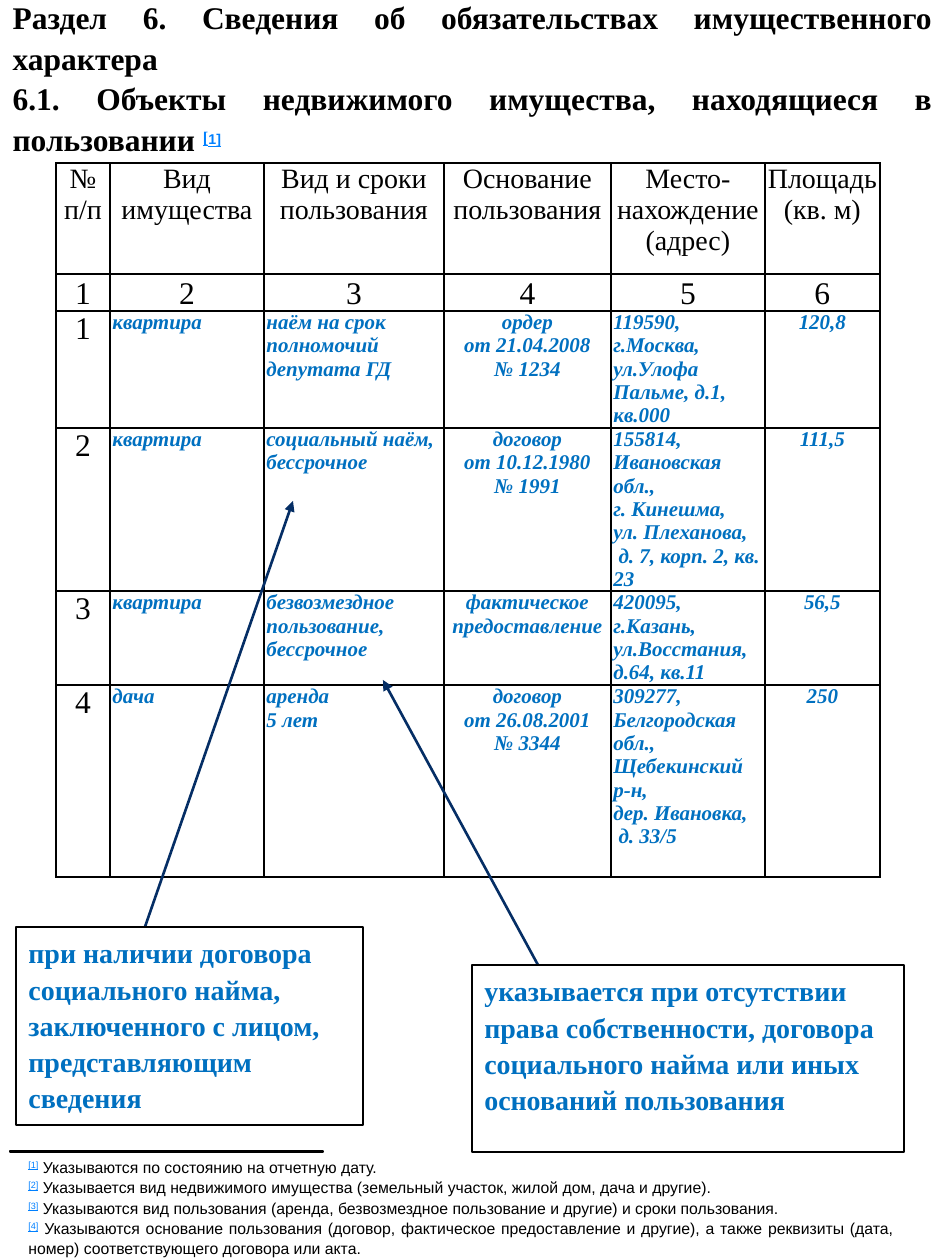
import pptx
import pptx.util
import pptx.dml.color
import pptx.enum.shapes
import pptx.enum.text
import pptx.oxml
import pptx.oxml.ns
from lxml import etree

PX = 914400 // 126
ALIGN = pptx.enum.text.PP_ALIGN
ANCHOR = pptx.enum.text.MSO_ANCHOR
SHAPES = pptx.enum.shapes

THEME = {
    "serif": "Times New Roman", "sans": "Arial",
    "black": "000000", "white": "FFFFFF", "blue": "0070C0",
    "link": "0080FF", "arrow": "052E65",
    "title": 18, "head": 16, "number": 18, "entry": 12, "callout": 16, "note": 9,
    "spacing": 1.08,
}

TITLE = [
    "Раздел 6. Сведения об обязательствах имущественного характера",
    "6.1. Объекты недвижимого имущества, находящиеся в пользовании ",
]
HEAD = ["№\vп/п", "Вид имущества", "Вид и сроки пользования", "Основание пользования",
        "Место-нахождение (адрес)", "Площадь\v(кв. м)"]
ENTRIES = [
    ["1", "квартира", "наём на срок полномочий депутата ГД",
     "ордер\nот 21.04.2008\n№ 1234",
     "119590, г.Москва, ул.Улофа Пальме, д.1, кв.000", "120,8"],
    ["2", "квартира", "социальный наём,\nбессрочное",
     "договор\nот 10.12.1980\n№ 1991",
     "155814, Ивановская обл.,\nг. Кинешма,\nул. Плеханова,\v д. 7, корп. 2, кв. 23", "111,5"],
    ["3", "квартира", "безвозмездное пользование,\nбессрочное",
     "фактическое предоставление",
     "420095, г.Казань, ул.Восстания, д.64, кв.11", "56,5"],
    ["4", "дача", "аренда\n5 лет", "договор\nот 26.08.2001\n№ 3344",
     "309277, Белгородская обл., Щебекинский р-н,\nдер. Ивановка,\n д. 33/5", "250"],
]
ROWS = [HEAD, [str(n) for n in range(1, 7)]] + ENTRIES
COL_WIDTHS = [54, 154, 180, 167, 154, 115]
ROW_HEIGHTS = [111, 37, 117, 163, 94, 192]
LEFT_COLUMNS = (1, 2, 4)

ARROWS = [((145, 927), (293, 501)), ((538, 965), (383, 680))]
CALLOUTS = [
    ((16, 927, 347, 198), "при наличии договора социального найма, "
     "заключенного с лицом, представляющим сведения"),
    ((472, 965, 432, 187), "указывается при отсутствии права собственности, "
     "договора социального найма или иных оснований пользования"),
]
NOTES = [
    "Указываются по состоянию на отчетную дату.",
    "Указывается вид недвижимого имущества (земельный участок, жилой дом, дача и другие).",
    "Указываются вид пользования (аренда, безвозмездное пользование и другие) и сроки пользования.",
    "Указываются основание пользования (договор, фактическое предоставление и другие), "
    "а также реквизиты (дата, номер) соответствующего договора или акта.",
]


def px(*values):
    return [v * PX for v in values]


def rgb(name):
    return pptx.dml.color.RGBColor.from_string(THEME[name])


def style(font, face, size, color, **attrs):
    font.color.rgb = rgb(color)
    for key, value in {"name": THEME[face], "size": pptx.util.Pt(size), **attrs}.items():
        setattr(font, key, value)


def add_run(p, text, *look, raised=False, **attrs):
    r = p.add_run()
    r.text = text
    style(r.font, *look, underline=raised, **attrs)
    if raised:
        r._r.get_or_add_rPr().set("baseline", "30000")


def paragraphs(tf, count, align):
    """Return count paragraphs of the frame, with the common line spacing."""
    while len(tf.paragraphs) < count:
        tf.add_paragraph()
    for p in tf.paragraphs:
        p.alignment, p.line_spacing = align, THEME["spacing"]
    return tf.paragraphs


def add_title(s):
    sp = s.shapes.title
    sp.left, sp.top, sp.width, sp.height = px(0, -6, 945, 165)
    tf = sp.text_frame
    tf.auto_size = pptx.enum.text.MSO_AUTO_SIZE.NONE
    tf.vertical_anchor = ANCHOR.MIDDLE
    for p, text in zip(paragraphs(tf, len(TITLE), ALIGN.JUSTIFY), TITLE):
        add_run(p, text, "serif", THEME["title"], "black", bold=True)
    add_run(p, "[", "serif", 16, "link", raised=True, bold=True)
    add_run(p, "1]", "sans", 14, "link", raised=True, bold=True)


def add_borders(cell):
    tcPr = cell._tc.get_or_add_tcPr()
    for i, side in enumerate(("lnL", "lnR", "lnT", "lnB")):
        tcPr.insert(i, pptx.oxml.parse_xml(
            f'<a:{side} {pptx.oxml.ns.nsdecls("a")} w="12700"><a:solidFill>'
            f'<a:srgbClr val="{THEME["black"]}"/></a:solidFill></a:{side}>'))


def cell_look(row, col):
    if row == 0:
        return "head", "black", False
    if row == 1 or col == 0:
        return "number", "black", False
    return "entry", "blue", True


def add_property_table(s):
    frame = s.shapes.add_table(len(ROWS), len(HEAD),
                               *px(56, 163, sum(COL_WIDTHS), sum(ROW_HEIGHTS)))
    table = frame.table
    table.first_row = table.horz_banding = False
    for column, width in zip(table.columns, COL_WIDTHS):
        column.width = width * PX
    for i, (row, height) in enumerate(zip(table.rows, ROW_HEIGHTS)):
        row.height = height * PX
        for j, cell in enumerate(row.cells):
            cell.text = ROWS[i][j]
            cell.fill.background()
            cell.margin_left = cell.margin_right = pptx.util.Inches(0.02)
            cell.margin_top = cell.margin_bottom = 0
            cell.vertical_anchor = ANCHOR.BOTTOM if i == 1 else ANCHOR.TOP
            add_borders(cell)
            size, color, strong = cell_look(i, j)
            left = i > 1 and j in LEFT_COLUMNS
            for p in cell.text_frame.paragraphs:
                p.alignment = ALIGN.LEFT if left else ALIGN.CENTER
                for r in p.runs:
                    style(r.font, "serif", THEME[size], color, bold=strong, italic=strong)


def add_arrow(s, start, end):
    line = s.shapes.add_connector(SHAPES.MSO_CONNECTOR.STRAIGHT, *px(*start, *end))
    line.line.color.rgb = rgb("arrow")
    line.line.width = pptx.util.Pt(1.5)
    ns = pptx.oxml.ns.qn
    etree.SubElement(line.line._get_or_add_ln(), ns("a:tailEnd"), type="triangle")
    etree.SubElement(line._element.spPr, ns("a:effectLst"))


def add_rect(s, box, fill):
    sp = s.shapes.add_shape(SHAPES.MSO_SHAPE.RECTANGLE, *px(*box))
    sp.shadow.inherit = False
    sp.fill.solid()
    sp.fill.fore_color.rgb = rgb(fill)
    sp.line.color.rgb = rgb("black")
    sp.line.width = pptx.util.Pt(0.75)
    return sp


def add_callout(s, box, text):
    tf = add_rect(s, box, "white").text_frame
    tf.word_wrap = True
    tf.vertical_anchor = ANCHOR.TOP
    p, = paragraphs(tf, 1, ALIGN.LEFT)
    add_run(p, text, "serif", THEME["callout"], "blue", bold=True)


def add_notes(s):
    tf = s.shapes.add_textbox(*px(16, 1153, 889, 108)).text_frame
    tf.word_wrap = True
    tf.vertical_anchor = ANCHOR.MIDDLE
    for i, p in enumerate(paragraphs(tf, len(NOTES), ALIGN.JUSTIFY)):
        add_run(p, f"[{i + 1}]", "sans", THEME["note"], "link", raised=True)
        add_run(p, f" {NOTES[i]}", "sans", THEME["note"], "black")


def main():
    prs = pptx.Presentation()
    prs.slide_width, prs.slide_height = px(945, 1260)
    s = prs.slides.add_slide(prs.slide_layouts[5])
    add_title(s)
    add_property_table(s)
    for start, end in ARROWS:
        add_arrow(s, start, end)
    for box, text in CALLOUTS:
        add_callout(s, box, text)
    add_rect(s, (10, 1151, 313, 1), "black")
    add_notes(s)
    prs.save("out.pptx")


if __name__ == "__main__":
    main()
